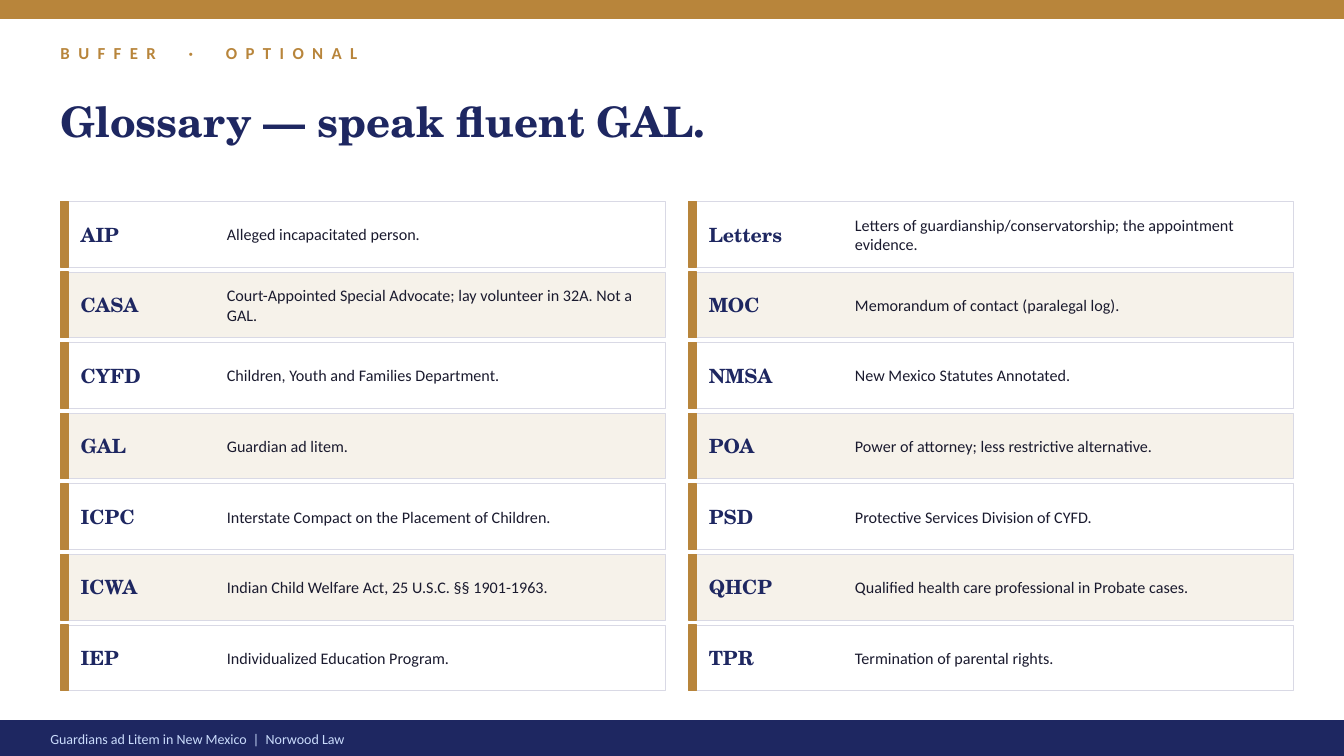
from pptx import Presentation
from pptx.dml.color import RGBColor
from pptx.enum.shapes import MSO_SHAPE
from pptx.enum.text import MSO_ANCHOR, MSO_AUTO_SIZE, PP_ALIGN
from pptx.util import Inches, Pt

GOLD = RGBColor(0xB8, 0x85, 0x3B)
NAVY = RGBColor(0x1E, 0x27, 0x61)
INK = RGBColor(0x1A, 0x1A, 0x2E)
WHITE = RGBColor(0xFF, 0xFF, 0xFF)
CREAM = RGBColor(0xF6, 0xF2, 0xEA)
BORDER = RGBColor(0xD9, 0xD9, 0xE5)
PALE_BLUE = RGBColor(0xCA, 0xDC, 0xFC)

SLIDE_WIDTH, SLIDE_HEIGHT = 13.33, 7.5
COLUMN_LEFTS = (0.6, 6.83)
FIRST_ROW_TOP, ROW_PITCH = 2, 0.7
CARD_WIDTH, CARD_HEIGHT = 6, 0.65

GLOSSARY = (
    (
        ("AIP", "Alleged incapacitated person."),
        ("CASA", "Court-Appointed Special Advocate; lay volunteer in 32A. Not a GAL."),
        ("CYFD", "Children, Youth and Families Department."),
        ("GAL", "Guardian ad litem."),
        ("ICPC", "Interstate Compact on the Placement of Children."),
        ("ICWA", "Indian Child Welfare Act, 25 U.S.C. §§ 1901-1963."),
        ("IEP", "Individualized Education Program."),
    ),
    (
        ("Letters", "Letters of guardianship/conservatorship; the appointment evidence."),
        ("MOC", "Memorandum of contact (paralegal log)."),
        ("NMSA", "New Mexico Statutes Annotated."),
        ("POA", "Power of attorney; less restrictive alternative."),
        ("PSD", "Protective Services Division of CYFD."),
        ("QHCP", "Qualified health care professional in Probate cases."),
        ("TPR", "Termination of parental rights."),
    ),
)


class GlossarySlide:
    """Holds the fonts and the current slide, and draws each kind of element."""

    heading_font = "TeX Gyre Schola"
    body_font = "Calibri"

    def __init__(self, presentation):
        self.slide = presentation.slides.add_slide(presentation.slide_layouts[5])

    def bar(self, left, top, width, height, fill, line=None, line_width=1):
        shape = self.slide.shapes.add_shape(
            MSO_SHAPE.RECTANGLE, Inches(left), Inches(top), Inches(width), Inches(height)
        )
        shape.shadow.inherit = False
        shape.fill.solid()
        shape.fill.fore_color.rgb = fill
        shape.line.color.rgb = line or fill
        shape.line.width = Pt(line_width)

    def set_text(self, shape, text, size, color, font, bold=False, spacing=0):
        frame = shape.text_frame
        frame.text = text
        frame.word_wrap = True
        frame.auto_size = MSO_AUTO_SIZE.NONE
        frame.vertical_anchor = MSO_ANCHOR.MIDDLE
        frame.margin_left = frame.margin_right = 0
        frame.margin_top = frame.margin_bottom = 0
        paragraph = frame.paragraphs[0]
        paragraph.alignment = PP_ALIGN.LEFT
        run = paragraph.runs[0]
        run.font.name = font
        run.font.size = Pt(size)
        run.font.bold = bold
        run.font.color.rgb = color
        if spacing:
            run._r.get_or_add_rPr().set("spc", str(spacing * 100))

    def title(self, left, top, width, height, text):
        shape = self.slide.shapes.title
        shape.left, shape.top = Inches(left), Inches(top)
        shape.width, shape.height = Inches(width), Inches(height)
        self.set_text(shape, text, 30, NAVY, self.heading_font, bold=True)

    def label(self, left, top, width, height, text, size, color, font=None, **style):
        shape = self.slide.shapes.add_textbox(
            Inches(left), Inches(top), Inches(width), Inches(height)
        )
        self.set_text(shape, text, size, color, font or self.body_font, **style)

    def card(self, left, top, fill, term, meaning):
        self.bar(left, top, CARD_WIDTH, CARD_HEIGHT, fill, BORDER, 0.5)
        self.bar(left, top, 0.08, CARD_HEIGHT, GOLD)
        self.label(left + 0.2, top, 1.4, CARD_HEIGHT, term, 14, NAVY,
                   self.heading_font, bold=True)
        self.label(left + 1.65, top, 4.15, CARD_HEIGHT, meaning, 11.5, INK)


def main():
    presentation = Presentation()
    presentation.slide_width = Inches(SLIDE_WIDTH)
    presentation.slide_height = Inches(SLIDE_HEIGHT)

    page = GlossarySlide(presentation)
    page.bar(0, 0, SLIDE_WIDTH, 0.18, GOLD)
    page.label(0.6, 0.35, 12, 0.35, "BUFFER  ·  OPTIONAL", 12, GOLD, bold=True, spacing=6)
    page.title(0.6, 0.7, 12, 1, "Glossary — speak fluent GAL.")

    for left, entries in zip(COLUMN_LEFTS, GLOSSARY):
        for row, (term, meaning) in enumerate(entries):
            fill = CREAM if row % 2 else WHITE
            page.card(left, FIRST_ROW_TOP + row * ROW_PITCH, fill, term, meaning)

    page.bar(0, 7.15, SLIDE_WIDTH, 0.35, NAVY)
    page.label(0.5, 7.18, 8, 0.3, "Guardians ad Litem in New Mexico  |  Norwood Law",
               10, PALE_BLUE)
    presentation.save("out.pptx")


if __name__ == "__main__":
    main()
